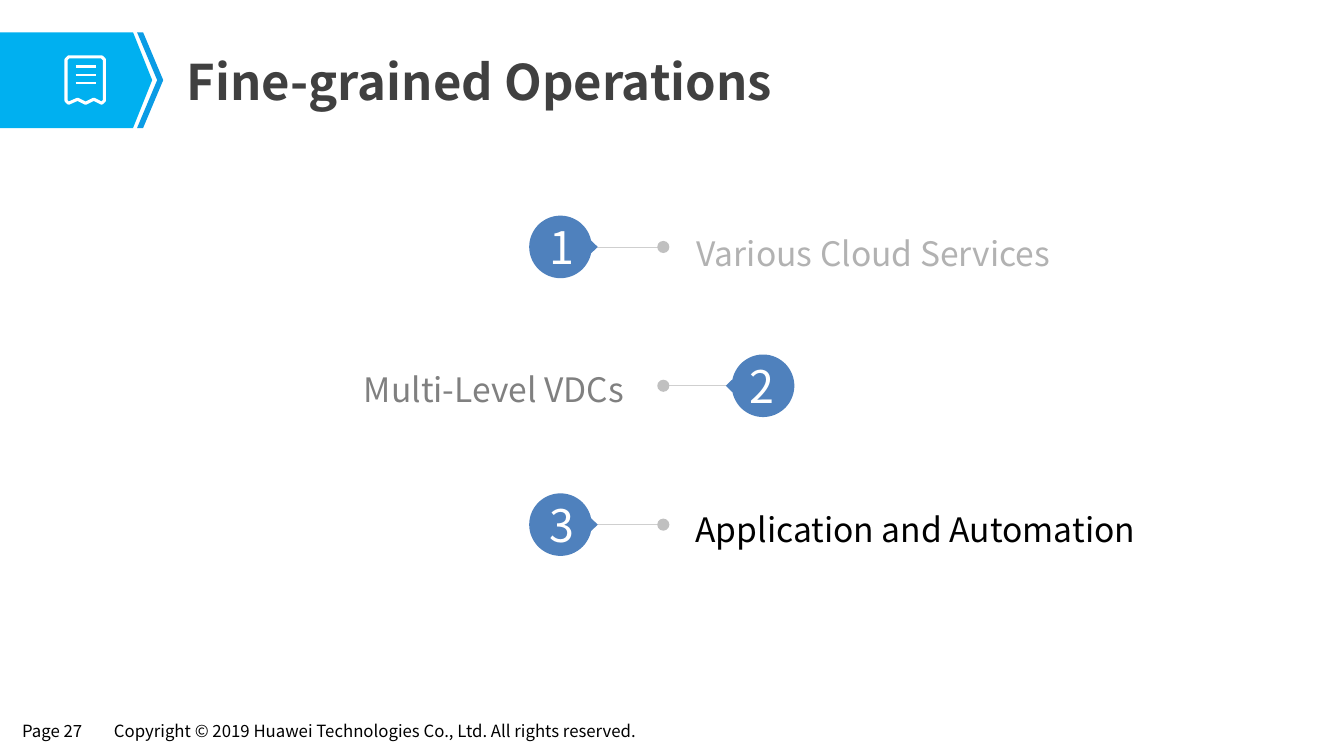
from dataclasses import dataclass
from math import cos, radians, sin

from lxml import etree
from pptx import Presentation, util as u
from pptx.dml.color import RGBColor
from pptx.enum import shapes, text
from pptx.oxml.ns import qn

Point = tuple[float, float]
Box = tuple[float, float, float, float]
COLS, ROWS = 53.33, 30


@dataclass(frozen=True)
class Theme:
    font: str = "Noto Sans CJK SC"
    band: str = "00B0F0"
    edge: str = "0B9CE5"
    badge: str = "4F81BD"
    dot: str = "C0C0C0"
    rule: str = "CFCFCF"
    white: str = "FFFFFF"
    black: str = "000000"
    title: str = "404040"
    pale: str = "B2B2B2"
    gray: str = "808080"
    head: int = 35
    digit: int = 32
    body: int = 24
    foot: int = 12


@dataclass(frozen=True)
class Step:
    words: str
    color: str
    side: int
    label: Box


THEME = Theme()
LEFT, RIGHT = -1, 1
STEPS = [
    Step("Various Cloud Services", THEME.pale, RIGHT, (27.64, 7.84, 16.52, 4.12)),
    Step("Multi-Level VDCs", THEME.gray, LEFT, (7.92, 13.2, 16.84, 4.12)),
    Step("Application and Automation", THEME.black, RIGHT, (27.6, 18.76, 18.76, 4.12)),
]
FIRST, PITCH, SPINE = 9.8, 5.51, 26.26
REACH, RADIUS, TIP = 4.02, 1.24, 1.48


def cell(count: float) -> int:
    return u.Inches(count / 4)


def place(box: Box) -> list[int]:
    return [cell(part) for part in box]


def paint(shape, fill: str | None, line: str | None = None, width: float = 1) -> None:
    shape.shadow.inherit = False
    if fill:
        shape.fill.solid()
        shape.fill.fore_color.rgb = RGBColor.from_string(fill)
    else:
        shape.fill.background()
    if line:
        shape.line.color.rgb = RGBColor.from_string(line)
        shape.line.width = u.Pt(width)
    else:
        shape.line.fill.background()


def write(shape, words: str, *, size: int, color: str, bold: bool = False,
          align=text.PP_ALIGN.LEFT, anchor=text.MSO_ANCHOR.MIDDLE,
          inset: Box = (0, 0, 0, 0), wrap: bool = True, space: float = 1) -> None:
    frame = shape.text_frame
    frame.text = words
    frame.auto_size = text.MSO_AUTO_SIZE.NONE
    frame.word_wrap = wrap
    frame.vertical_anchor = anchor
    (frame.margin_left, frame.margin_top,
     frame.margin_right, frame.margin_bottom) = place(inset)
    line = frame.paragraphs[0]
    line.alignment = align
    line.line_spacing = space
    font = line.runs[0].font
    font.name, font.size, font.bold = THEME.font, u.Pt(size), bold
    font.color.rgb = RGBColor.from_string(color)


def outline(slide, points: list[Point]):
    path = [(cell(x), cell(y)) for x, y in points]
    pen = slide.shapes.build_freeform(*path[0])
    pen.add_line_segments(path[1:], close=True)
    return pen.convert_to_shape()


def link(slide, start: Point, end: Point, color: str, width: float) -> None:
    line = slide.shapes.add_connector(
        shapes.MSO_CONNECTOR.STRAIGHT, *place((*start, *end)))
    line.line.color.rgb = RGBColor.from_string(color)
    line.line.width = u.Pt(width)
    etree.SubElement(line._element.spPr, qn("a:effectLst"))


def footer(slide) -> None:
    notes = [
        (0.52, 3.36, "Page 27"),
        (4.16, 22.44, "Copyright © 2019 Huawei Technologies Co., Ltd. All rights reserved."),
    ]
    for left, wide, words in notes:
        box = slide.shapes.add_textbox(*place((left, 28.44, wide, 1.16)))
        write(box, words, size=THEME.foot, color=THEME.black, wrap=False,
              anchor=text.MSO_ANCHOR.TOP, inset=(0.36, 0.18, 0.36, 0.18))


def banner(slide) -> None:
    top, mid, base = 1.28, 3.18, 5.08
    band = [(0, top), (5.28, top), (6.04, mid), (5.28, base), (0, base)]
    edge = [(5.44, top), (5.68, top), (6.48, mid),
            (5.68, base), (5.44, base), (6.24, mid)]
    paint(outline(slide, band), THEME.band)
    paint(outline(slide, edge), THEME.edge)

    bill = [(2.72, 2.26), (4.04, 2.26), (4.14, 2.36), (4.14, 4), (4.04, 4.1),
            (3.72, 3.94), (3.4, 4.1), (3.08, 3.94), (2.72, 4.1),
            (2.62, 4), (2.62, 2.36)]
    paint(outline(slide, bill), None, THEME.white, 2.2)
    for row in range(3):
        y = 2.64 + 0.33 * row
        link(slide, (3, y), (3.8, y), THEME.white, 1.7)


def heading(slide) -> None:
    title = slide.shapes.title
    title.left, title.top, title.width, title.height = place((6.96, 1.8, 43, 2.8))
    write(title, "Fine-grained Operations", size=THEME.head, color=THEME.title,
          bold=True, inset=(0.44, 0.24, 0.44, 0.24))


def badge(slide, digit: int, x: float, y: float, side: int) -> None:
    rim = [(x + side * RADIUS * cos(radians(turn)), y + RADIUS * sin(radians(turn)))
           for turn in range(12, 349, 4)]
    shape = outline(slide, [(x + side * TIP, y), *rim])
    paint(shape, THEME.badge)
    inset = (0, 0, 0.16, 0) if side == RIGHT else (0.16, 0, 0, 0)
    write(shape, str(digit), size=THEME.digit, color=THEME.white,
          align=text.PP_ALIGN.CENTER, inset=inset)


def draw(slide, index: int, step: Step) -> None:
    y = FIRST + PITCH * index
    x = SPINE - step.side * REACH
    link(slide, (SPINE, y), (x + step.side * 1.36, y), THEME.rule, 0.5)
    label = slide.shapes.add_textbox(*place(step.label))
    align = text.PP_ALIGN.LEFT if step.side == RIGHT else text.PP_ALIGN.RIGHT
    write(label, step.words, size=THEME.body, color=step.color, align=align, space=1.2)
    dot = slide.shapes.add_shape(
        shapes.MSO_SHAPE.OVAL, *place((SPINE - 0.18, y - 0.24, 0.48, 0.48)))
    paint(dot, THEME.dot)
    badge(slide, index + 1, x, y, step.side)


def main() -> None:
    deck = Presentation()
    deck.slide_width, deck.slide_height = cell(COLS), cell(ROWS)
    slide = deck.slides.add_slide(deck.slide_layouts.get_by_name("Title Only"))
    footer(slide)
    banner(slide)
    heading(slide)
    for index, step in enumerate(STEPS):
        draw(slide, index, step)
    deck.save("out.pptx")


if __name__ == "__main__":
    main()
